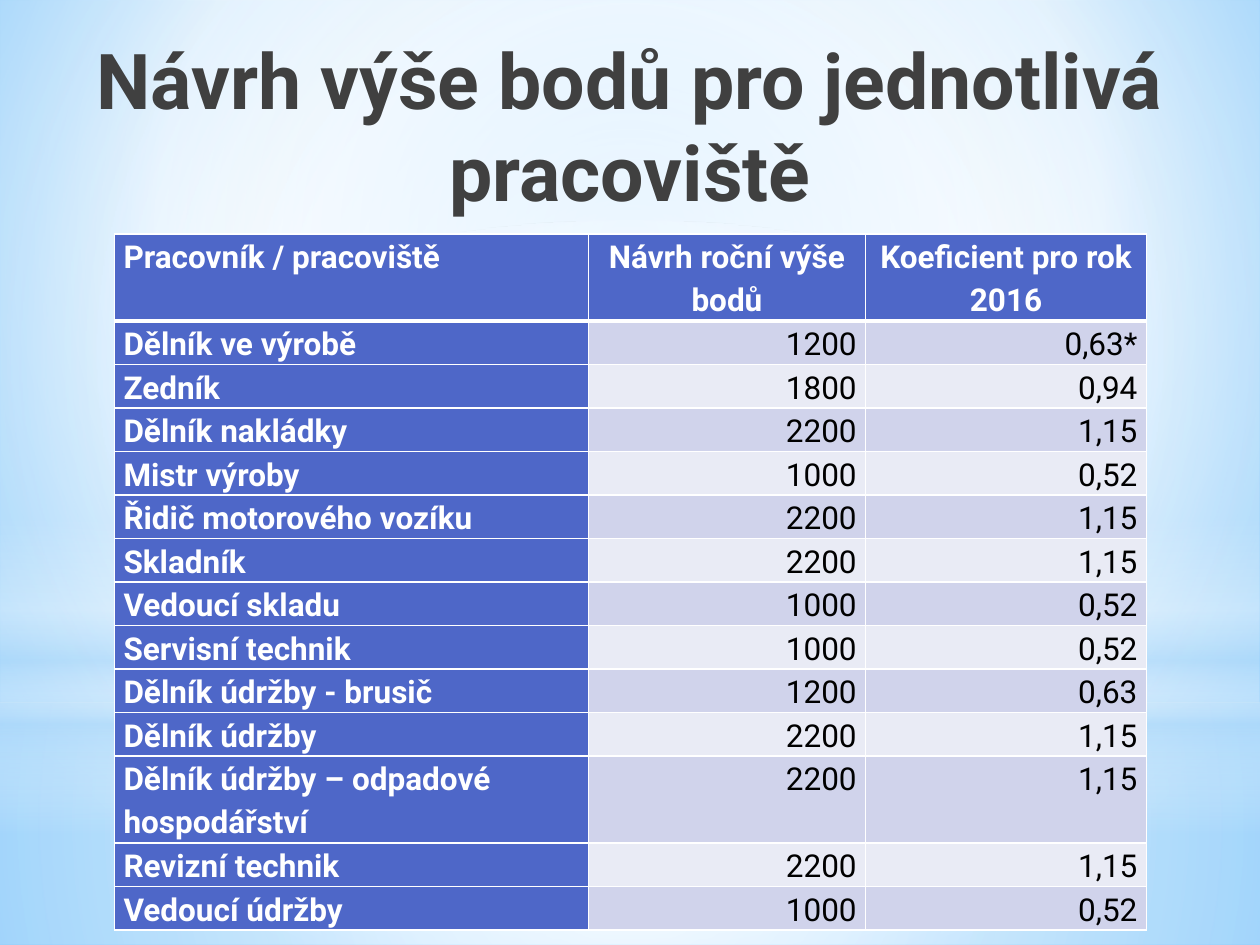
from lxml import etree
from pptx import Presentation
from pptx.dml.color import RGBColor
from pptx.enum.shapes import MSO_SHAPE
from pptx.enum.text import MSO_ANCHOR, PP_ALIGN
from pptx.oxml.ns import qn
from pptx.util import Cm, Pt

RECTANGLE, OVAL = MSO_SHAPE.RECTANGLE, MSO_SHAPE.OVAL
LEFT, CENTER, RIGHT = PP_ALIGN.LEFT, PP_ALIGN.CENTER, PP_ALIGN.RIGHT
TOP = MSO_ANCHOR.TOP

FONT = "Roboto"
COLORS = {
    "white": "FFFFFF",
    "black": "000000",
    "title": "404040",
    "header": "4E67C8",
    "odd_row": "D0D3EB",
    "even_row": "E9EBF5",
    "haze": "B4DCFA",
    "sky": "9ED5FF",
    "deep_sky": "5BB9FF",
}

SLIDE_WIDTH, SLIDE_HEIGHT = 25.4, 19.05
HORIZON = 14.17
MIDDLE = (50, 50, 50, 50)

TITLE = "Návrh výše bodů pro jednotlivá pracoviště"
HEADINGS = ("Pracovník / pracoviště", "Návrh roční výše bodů", "Koeficient pro rok 2016")
WORKPLACES = [
    ("Dělník ve výrobě", "1200", "0,63*"),
    ("Zedník", "1800", "0,94"),
    ("Dělník nakládky", "2200", "1,15"),
    ("Mistr výroby", "1000", "0,52"),
    ("Řidič motorového vozíku", "2200", "1,15"),
    ("Skladník", "2200", "1,15"),
    ("Vedoucí skladu", "1000", "0,52"),
    ("Servisní technik", "1000", "0,52"),
    ("Dělník údržby - brusič", "1200", "0,63"),
    ("Dělník údržby", "2200", "1,15"),
    ("Dělník údržby – odpadové hospodářství", "2200", "1,15"),
    ("Revizní technik", "2200", "1,15"),
    ("Vedoucí údržby", "1000", "0,52"),
]
COLUMN_WIDTHS = (9.55, 5.59, 5.66)
LINE_HEIGHT = 0.85
TWO_LINE_ROWS = (0, 11)


def rgb(name):
    return RGBColor.from_string(COLORS[name])


def add_color(parent, name, opacity=100):
    color = etree.SubElement(parent, qn("a:srgbClr"), val=COLORS[name])
    if opacity < 100:
        etree.SubElement(color, qn("a:alpha"), val=str(opacity * 1000))


def set_gradient(fill, element, stops, focus=None):
    """Stops are (position, color, opacity); focus makes the gradient circular."""
    fill.gradient()
    gradient = element.find(".//" + qn("a:gradFill"))
    for child in list(gradient):
        gradient.remove(child)
    stop_list = etree.SubElement(gradient, qn("a:gsLst"))
    for position, name, opacity in stops:
        stop = etree.SubElement(stop_list, qn("a:gs"), pos=str(position * 1000))
        add_color(stop, name, opacity)
    if focus:
        circle = etree.SubElement(gradient, qn("a:path"), path="circle")
        sides = {side: str(value * 1000) for side, value in zip("ltrb", focus)}
        etree.SubElement(circle, qn("a:fillToRect"), **sides)
    else:
        etree.SubElement(gradient, qn("a:lin"), ang="5400000", scaled="0")


def add_glow(slide, kind, top, height, stops, focus=None):
    shape = slide.shapes.add_shape(kind, 0, Cm(top), Cm(SLIDE_WIDTH), Cm(height))
    shape.shadow.inherit = False
    shape.line.fill.background()
    set_gradient(shape.fill, shape._element, stops, focus)


def write_text(frame, text, size=18, color="black", bold=False, align=LEFT, spacing=1.0):
    frame.word_wrap = True
    paragraph = frame.paragraphs[0]
    paragraph.alignment = align
    paragraph.line_spacing = spacing
    run = paragraph.add_run()
    run.text = text
    run.font.name = FONT
    run.font.size = Pt(size)
    run.font.bold = bold
    run.font.color.rgb = rgb(color)


def set_borders(cell, top=1, bottom=1):
    properties = cell._tc.get_or_add_tcPr()
    widths = {"a:lnL": 1, "a:lnR": 1, "a:lnT": top, "a:lnB": bottom}
    for index, (tag, width) in enumerate(widths.items()):
        line = etree.Element(qn(tag), w=str(Pt(width)))
        add_color(etree.SubElement(line, qn("a:solidFill")), "white")
        properties.insert(index, line)


def format_cell(cell, text, row, column):
    is_heading = row == 0
    is_label = is_heading or column == 0
    if column == 0:
        align = LEFT
    else:
        align = CENTER if is_heading else RIGHT
    band = "odd_row" if row % 2 else "even_row"

    cell.margin_left = cell.margin_right = Cm(0.18)
    cell.margin_top = cell.margin_bottom = 0
    cell.fill.solid()
    cell.fill.fore_color.rgb = rgb("header" if is_label else band)
    write_text(cell.text_frame, text, color="white" if is_label else "black",
               bold=is_label, align=align, spacing=1.15)
    set_borders(cell, top=3 if row == 1 else 1, bottom=3 if is_heading else 1)


def add_background(slide):
    set_gradient(slide.background.fill, slide.element,
                 [(0, "sky", 100), (60, "white", 100), (100, "deep_sky", 100)],
                 (20, 10, 20, 60))
    # Ground and sky
    add_glow(slide, RECTANGLE, HORIZON, SLIDE_HEIGHT - HORIZON,
             [(0, "white", 91), (37, "white", 76), (100, "haze", 79)], MIDDLE)
    add_glow(slide, RECTANGLE, 0, HORIZON,
             [(0, "white", 89), (48, "white", 62), (100, "haze", 79)], MIDDLE)
    # Band along the horizon
    add_glow(slide, RECTANGLE, 10.46, 6.35,
             [(0, "white", 0), (29, "white", 30), (45, "haze", 40),
              (55, "white", 26), (65, "haze", 60), (100, "white", 0)])
    # Soft light in the centre
    add_glow(slide, OVAL, 4.45, HORIZON, [(0, "white", 100), (56, "white", 0)], MIDDLE)


def add_title(slide):
    box = slide.shapes.add_textbox(Cm(0.5), Cm(0.53), Cm(24.4), Cm(3.2))
    box.text_frame.vertical_anchor = TOP
    write_text(box.text_frame, TITLE, size=44, color="title", bold=True, align=CENTER)


def add_points_table(slide):
    rows = [HEADINGS] + WORKPLACES
    heights = [LINE_HEIGHT * (2 if row in TWO_LINE_ROWS else 1) for row in range(len(rows))]
    table = slide.shapes.add_table(
        len(rows), len(HEADINGS), Cm(2.31), Cm(4.72),
        Cm(sum(COLUMN_WIDTHS)), Cm(sum(heights))).table
    for column, width in zip(table.columns, COLUMN_WIDTHS):
        column.width = Cm(width)
    for row, (texts, height) in enumerate(zip(rows, heights)):
        table.rows[row].height = Cm(height)
        for column, text in enumerate(texts):
            format_cell(table.cell(row, column), text, row, column)


def main():
    presentation = Presentation()
    presentation.slide_width = Cm(SLIDE_WIDTH)
    presentation.slide_height = Cm(SLIDE_HEIGHT)
    slide = presentation.slides.add_slide(presentation.slide_layouts[6])
    add_background(slide)
    add_title(slide)
    add_points_table(slide)
    presentation.save("out.pptx")


if __name__ == "__main__":
    main()
